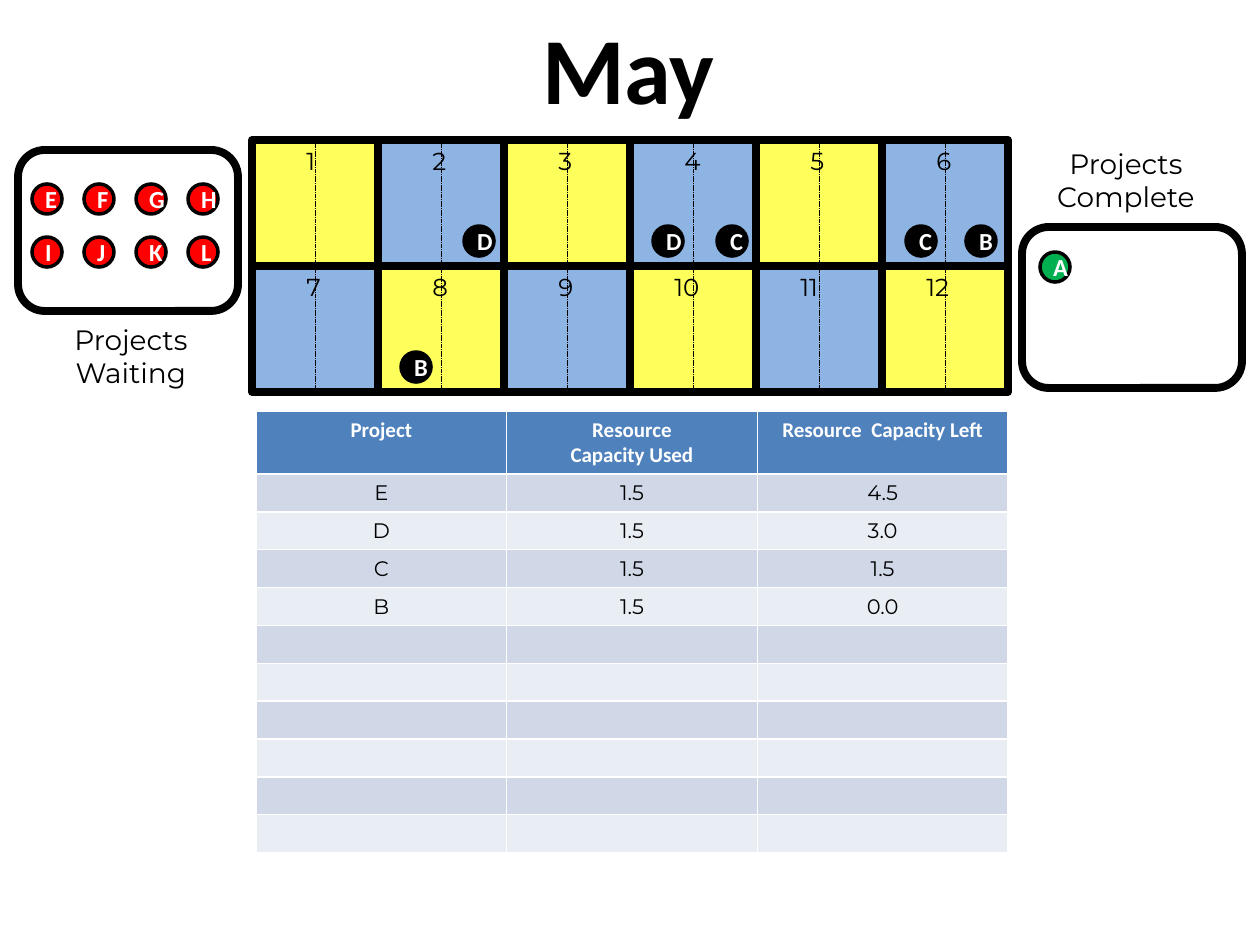
from lxml import etree
from pptx import Presentation, util as u
from pptx.dml.color import RGBColor
from pptx.enum import dml, shapes, text
from pptx.oxml.ns import qn

PX = 914400 / 126
BLACK, WHITE, YELLOW, BLUE = "000000", "FFFFFF", "FFFF5B", "8EB4E3"
RED, GREEN = "FF0000", "00B050"
CELL, BOARD_LEFT, BOARD_TOP = 126, 252, 140
COLUMNS, ROWS = 6, 2


def paint(target, color):
    """Give a fill, a line's fill or a font's fill one solid colour."""
    target.solid()
    target.fore_color.rgb = RGBColor.from_string(color)


def write(frame, words, size, font="Montserrat", color=BLACK, bold=False,
          align=text.PP_ALIGN.CENTER):
    """Fill a text frame; each line of words becomes a paragraph."""
    frame.text = words
    for paragraph in frame.paragraphs:
        paragraph.alignment = align
        paragraph.font.size = u.Pt(size)
        paragraph.font.name = font
        paragraph.font.bold = bold
        paint(paragraph.font.fill, color)


presentation = Presentation()
presentation.slide_width = u.Inches(10)
presentation.slide_height = u.Inches(7.5)
slide = presentation.slides.add_slide(presentation.slide_layouts[6])

# Board, waiting box and complete box: kind, left, top, width, height, fill, line
ELLIPSE, ROUNDED = shapes.MSO_SHAPE.OVAL, shapes.MSO_SHAPE.ROUNDED_RECTANGLE
outlines = [
    (shapes.MSO_SHAPE.RECTANGLE, BOARD_LEFT + CELL * column, BOARD_TOP + CELL * row,
     CELL, CELL, BLUE if (row + column) % 2 else YELLOW)
    for row in range(ROWS) for column in range(COLUMNS)
]
outlines += [(ROUNDED, 18, 150, 220, 161, None), (ROUNDED, 1022, 227, 220, 161, None)]
for kind, left, top, width, height, color in outlines:
    shape = slide.shapes.add_shape(
        kind, *(int(value * PX) for value in (left, top, width, height)))
    shape.shadow.inherit = False
    if color:
        paint(shape.fill, color)
    else:
        shape.fill.background()
    paint(shape.line.fill, BLACK)
    shape.line.width = u.Pt(4.5)

# Dotted half-month lines
for column in range(COLUMNS):
    middle = int((BOARD_LEFT + CELL * column + CELL // 2) * PX)
    line = slide.shapes.add_connector(
        shapes.MSO_CONNECTOR.STRAIGHT, middle, int(BOARD_TOP * PX),
        middle, int((BOARD_TOP + CELL * ROWS) * PX))
    paint(line.line.fill, BLACK)
    line.line.width = u.Pt(0.25)
    line.line.dash_style = dml.MSO_LINE.SQUARE_DOT
    etree.SubElement(line._element.spPr, qn("a:effectLst"))

# Project tokens: letter, left, top, colour
tokens = [(letter, 32 + 52 * (index % 4), 184 + 53 * (index // 4), RED)
          for index, letter in enumerate("EFGHIJKL")]
tokens += [
    ("D", 464, 226, BLACK), ("D", 653, 226, BLACK), ("C", 717, 226, BLACK),
    ("C", 906, 226, BLACK), ("B", 966, 226, BLACK), ("B", 401, 352, BLACK),
    ("A", 1040, 252, GREEN),
]
for letter, left, top, color in tokens:
    token = slide.shapes.add_shape(
        ELLIPSE, int(left * PX), int(top * PX), int(30 * PX), int(30 * PX))
    token.shadow.inherit = False
    paint(token.fill, color)
    paint(token.line.fill, BLACK)
    token.line.width = u.Pt(2)
    token.text_frame.vertical_anchor = text.MSO_ANCHOR.MIDDLE
    write(token.text_frame, letter, 14, "Calibri", WHITE, True)

# Labels: words, left, top, width, height, size, alignment
labels = [
    ("Projects Waiting", 30, 316, 202, 81, 16, text.PP_ALIGN.CENTER),
    ("Projects Complete", 1025, 140, 202, 81, 16, text.PP_ALIGN.CENTER),
]
for index in range(COLUMNS * ROWS):
    row, column = divmod(index, COLUMNS)
    inset, width = (42, 53) if index < 9 else (32, 63)
    labels.append((str(index + 1), BOARD_LEFT + CELL * column + inset,
                   BOARD_TOP + CELL * row, width, 43, 14, text.PP_ALIGN.LEFT))
for words, left, top, width, height, size, align in labels:
    box = slide.shapes.add_textbox(
        *(int(value * PX) for value in (left, top, width, height)))
    box.text_frame.word_wrap = True
    write(box.text_frame, words, size, align=align)

# Title with a black text outline
title = slide.shapes.add_textbox(int(529 * PX), int(4 * PX), int(199 * PX), int(127 * PX))
title.text_frame.word_wrap = False
write(title.text_frame, "May", 54, "Calibri", bold=True)
run_properties = title.text_frame.paragraphs[0].runs[0]._r.get_or_add_rPr()
outline = etree.SubElement(run_properties, qn("a:ln"), w="12700")
outline_fill = etree.SubElement(outline, qn("a:solidFill"))
etree.SubElement(outline_fill, qn("a:srgbClr"), val=BLACK)

# Capacity table
header = ("Project", "Resource\nCapacity Used", "Resource  Capacity Left")
records = [("E", "1.5", "4.5"), ("D", "1.5", "3.0"), ("C", "1.5", "1.5"), ("B", "1.5", "0.0")]
records += [("", "", "")] * 6
table = slide.shapes.add_table(
    len(records) + 1, len(header), int(256 * PX), int(411 * PX),
    int(752 * PX), u.Inches(3.5)).table
for row_index, record in enumerate([header] + records):
    is_header = row_index == 0
    table.rows[row_index].height = u.Inches(0.5 if is_header else 0.3)
    for column, words in enumerate(record):
        cell = table.cell(row_index, column)
        if is_header:
            paint(cell.fill, "4F81BD")
            write(cell.text_frame, words, 12, "Calibri", WHITE, True)
        else:
            paint(cell.fill, "D0D8E8" if row_index % 2 else "E9EDF4")
            write(cell.text_frame, words, 12)
        if not words:
            # An empty cell takes its line height from the end mark
            end_mark = etree.SubElement(cell.text_frame.paragraphs[0]._p, qn("a:endParaRPr"))
            end_mark.set("sz", "1200")

presentation.save("out.pptx")
